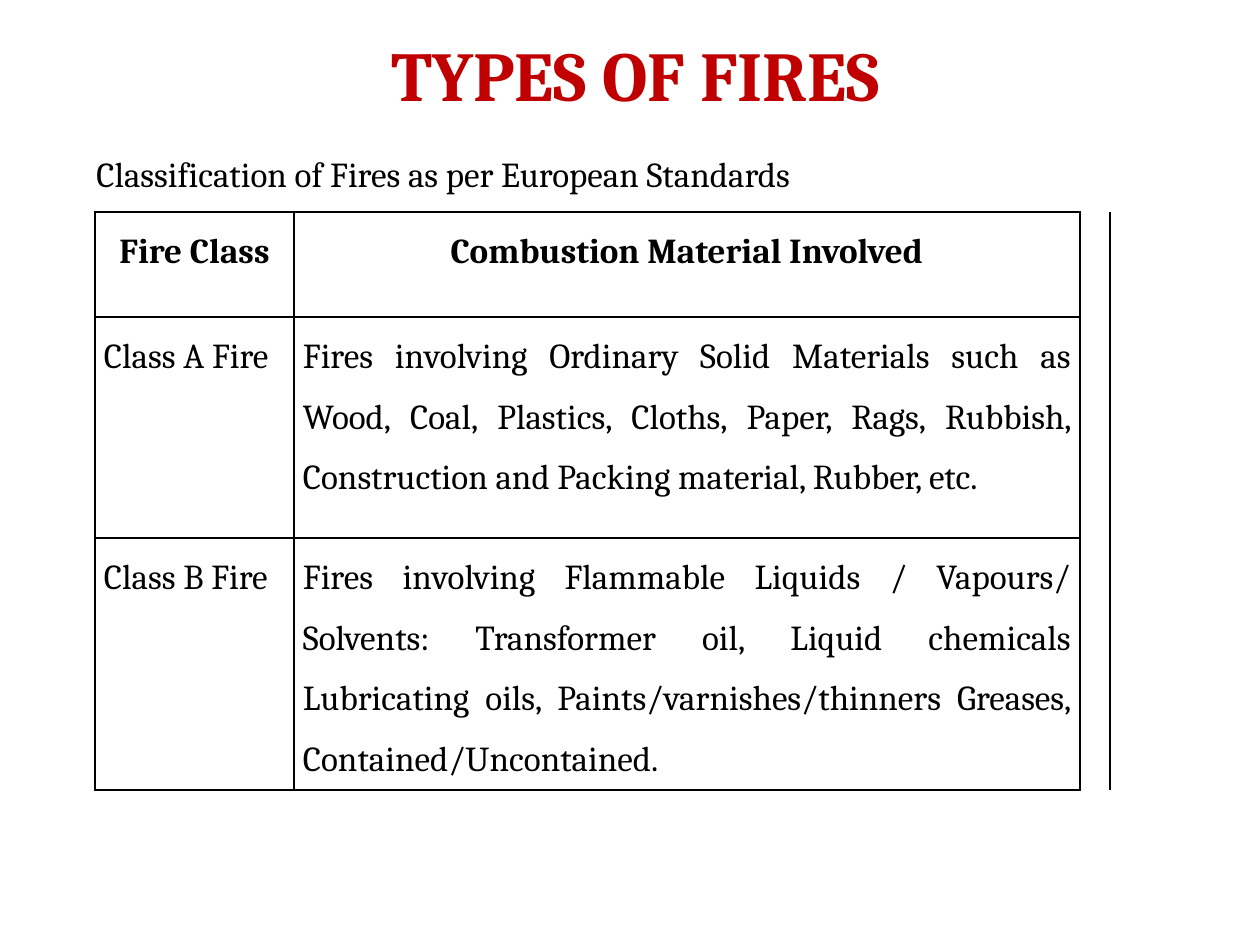
from pptx import Presentation
from pptx.dml.color import RGBColor
from pptx.enum.text import MSO_ANCHOR, PP_ALIGN
from pptx.oxml import parse_xml
from pptx.oxml.ns import nsdecls
from pptx.util import Pt

BLACK = RGBColor(0x00, 0x00, 0x00)
WHITE = RGBColor(0xFF, 0xFF, 0xFF)
RED = RGBColor(0xC0, 0x00, 0x00)
SCALE = 914400 / 126
WIDTHS = [199, 786, 24]
HEIGHTS = [105, 221, 242]
ROWS = [
    ("Fire Class", "Combustion Material Involved"),
    ("Class A Fire",
     "Fires involving Ordinary Solid Materials such as Wood, Coal, Plastics, "
     "Cloths, Paper, Rags, Rubbish, Construction and Packing material, Rubber, etc."),
    ("Class B Fire",
     "Fires involving Flammable Liquids / Vapours/ Solvents: Transformer oil, "
     "Liquid chemicals Lubricating oils, Paints/varnishes/thinners Greases, "
     "Contained/Uncontained."),
]


def px(num):
    """Turn pixels into EMU."""
    return round(num * SCALE)


class Deck:
    """Hold the style and the current slide."""

    def __init__(self, slide):
        """Keep the slide and the base font."""
        self.slide = slide
        self.font = {"name": "Cambria", "size": Pt(20), "bold": False}

    def label(self, frame, text, align, color=BLACK, space=None, **extra):
        """Fill a frame with one styled paragraph."""
        para = frame.paragraphs[0]
        para.alignment = align
        para.line_spacing = space
        run = para.add_run()
        run.text = text
        for key, val in {**self.font, **extra}.items():
            setattr(run.font, key, val)
        run.font.color.rgb = color

    def text(self, box, text, align, pad, **style):
        """Add a wrapped text box."""
        frame = self.slide.shapes.add_textbox(*map(px, box)).text_frame
        frame.word_wrap = True
        frame.vertical_anchor = MSO_ANCHOR.TOP
        frame.margin_top = px(pad)
        self.label(frame, text, align, **style)

    def border(self, cell, sides):
        """Draw the named sides of a cell and clear the rest."""
        props = cell._tc.get_or_add_tcPr()
        for side in "LRTB":
            fill = "<a:noFill/>"
            if side in sides:
                fill = f'<a:solidFill><a:srgbClr val="{BLACK}"/></a:solidFill>'
            props.append(parse_xml(
                f'<a:ln{side} {nsdecls("a")} w="12700">{fill}</a:ln{side}>'))

    def table(self, left, top, widths, heights, rows):
        """Add a ruled table with an empty merged last column."""
        box = (left, top, sum(widths), sum(heights))
        grid = self.slide.shapes.add_table(
            len(heights), len(widths), *map(px, box)).table
        for col, width in zip(grid.columns, widths):
            col.width = px(width)
        for row, height in zip(grid.rows, heights):
            row.height = px(height)
        last = len(widths) - 1
        grid.cell(0, last).merge(grid.cell(len(heights) - 1, last))
        for r, row in enumerate(grid.rows):
            for c, cell in enumerate(row.cells):
                self.border(cell, "LR" if c == last else "LRTB")
                cell.fill.solid()
                cell.fill.fore_color.rgb = WHITE
                if c < last:
                    cell.margin_left = cell.margin_right = px(9)
                    cell.margin_top = cell.margin_bottom = 0
                    align = PP_ALIGN.JUSTIFY if r else PP_ALIGN.CENTER
                    self.label(cell.text_frame, rows[r][c], align,
                               space=1.5, bold=r == 0)


def main():
    """Build and save the slide."""
    show = Presentation()
    show.slide_width, show.slide_height = px(1260), px(945)
    deck = Deck(show.slides.add_slide(show.slide_layouts[6]))
    deck.text((42, 32, 1187, 179), "TYPES OF FIRES", PP_ALIGN.CENTER, 0,
              color=RED, size=Pt(40), bold=True)
    deck.text((84, 147, 1021, 63),
              "Classification of Fires as per European Standards",
              PP_ALIGN.JUSTIFY, 6)
    deck.table(95, 212, WIDTHS, HEIGHTS, ROWS)
    show.save("out.pptx")


if __name__ == "__main__":
    main()
